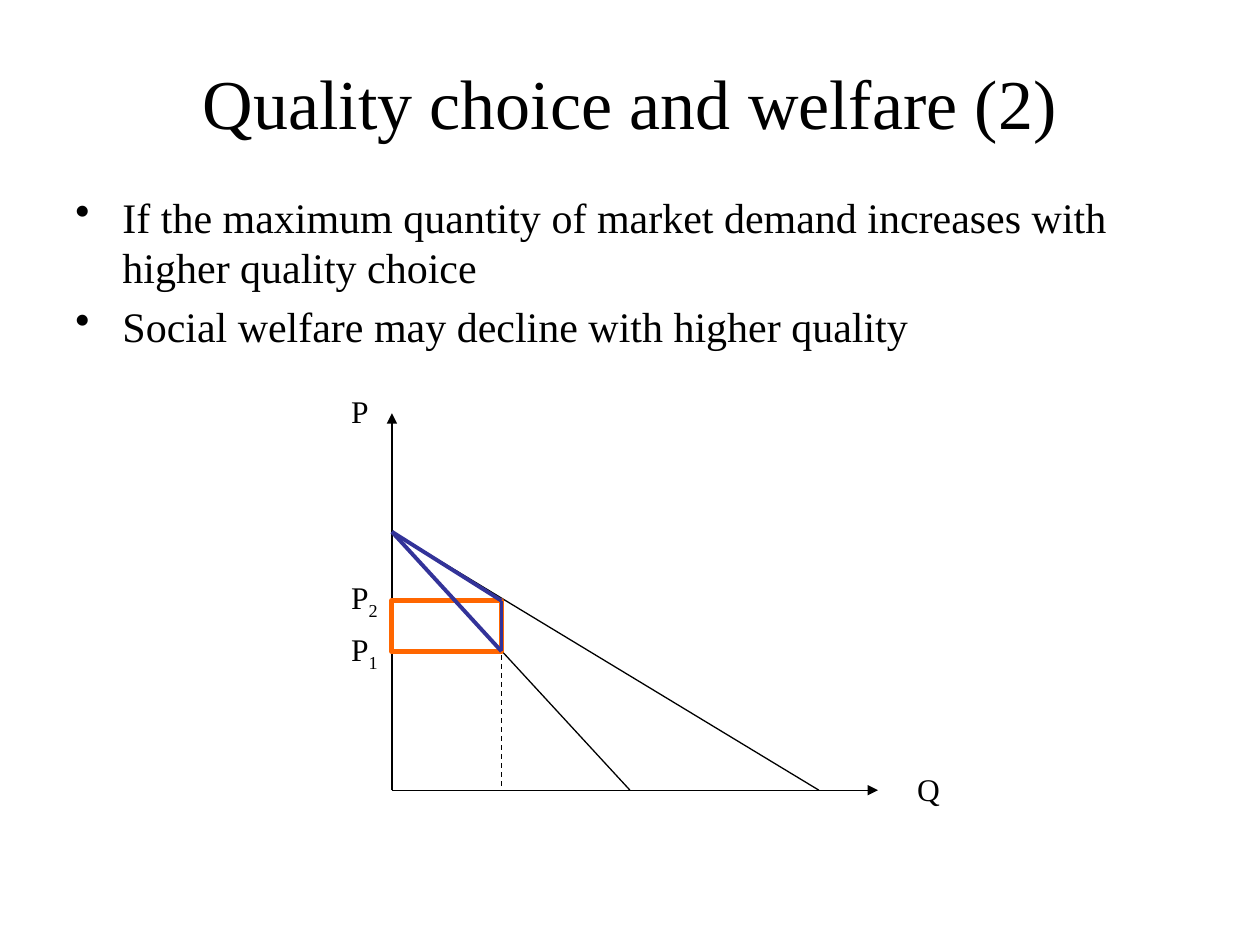
from lxml import etree
from pptx import Presentation
from pptx.dml.color import RGBColor
from pptx.enum.dml import MSO_LINE
from pptx.enum.shapes import MSO_CONNECTOR, MSO_SHAPE
from pptx.enum.text import MSO_ANCHOR, PP_ALIGN
from pptx.oxml.ns import qn
from pptx.util import Cm, Pt

STRAIGHT = MSO_CONNECTOR.STRAIGHT
RECT = MSO_SHAPE.RECTANGLE
DASH = MSO_LINE.DASH
MIDDLE = MSO_ANCHOR.MIDDLE
CENTER = PP_ALIGN.CENTER

FONT = "Times New Roman"
COLORS = {"ink": "000000", "rent": "FF6600", "gain": "333399"}


def color(name):
    return RGBColor.from_string(COLORS[name])


def add_run(para, text, size, base=None):
    """Add one run; base is a baseline shift in percent."""
    run = para.add_run()
    run.text = text
    run.font.name = FONT
    run.font.size = Pt(size)
    run.font.color.rgb = color("ink")
    if base:
        run.font._element.set("baseline", str(base * 1000))


def add_box(slide, box, wrap=True):
    frame = slide.shapes.add_textbox(*map(Cm, box)).text_frame
    frame.word_wrap = wrap
    return frame


def add_title(slide, box, text):
    frame = add_box(slide, box)
    frame.vertical_anchor = MIDDLE
    para = frame.paragraphs[0]
    para.alignment = CENTER
    add_run(para, text, 40)


def add_bullets(slide, box, items):
    frame = add_box(slide, box)
    for i, item in enumerate(items):
        para = frame.add_paragraph() if i else frame.paragraphs[0]
        para.space_before = Pt(5)
        props = para._p.get_or_add_pPr()
        props.set("marL", str(Cm(0.95)))
        props.set("indent", str(-Cm(0.95)))
        etree.SubElement(props, qn("a:buChar")).set("char", "•")
        add_run(para, item, 24)


def add_line(slide, start, end, name="ink", width=0.75, dash=None, arrow=False):
    line = slide.shapes.add_connector(STRAIGHT, *map(Cm, (*start, *end)))
    line.line.color.rgb = color(name)
    line.line.width = Pt(width)
    if dash:
        line.line.dash_style = dash
    if arrow:
        stroke = line.line._get_or_add_ln()
        etree.SubElement(stroke, qn("a:tailEnd")).set("type", "triangle")
    etree.SubElement(line._element.spPr, qn("a:effectLst"))


def add_label(slide, left, top, text, sub=""):
    frame = add_box(slide, (left, top, 1.07 if sub else 0.9, 1.02), wrap=False)
    para = frame.paragraphs[0]
    add_run(para, text, 18)
    if sub:
        add_run(para, sub, 18, -25)


def add_graph(slide, box):
    """Draw two demand lines that share a choke price."""
    left, top, wide, high = box
    base = top + high
    peak = (left, top + 2.39)
    sold = left + 2.21
    high_p, low_p = top + 3.78, top + 4.8
    upper, lower = (sold, high_p), (sold, low_p)

    for end in ((left, top), (left + wide, base)):
        add_line(slide, (left, base), end, arrow=True)
    for reach in (4.8, 8.61):
        add_line(slide, peak, (left + reach, base))
    for start, end in (
        ((left, low_p), lower),
        (upper, (sold, base)),
        (upper, (left, high_p)),
    ):
        add_line(slide, start, end, dash=DASH)

    rent = slide.shapes.add_shape(
        RECT, *map(Cm, (left, high_p, sold - left, low_p - high_p)))
    rent.shadow.inherit = False
    rent.fill.background()
    rent.line.color.rgb = color("rent")
    rent.line.width = Pt(3)

    for start, end in ((peak, upper), (peak, lower), (upper, lower)):
        add_line(slide, start, end, "gain", 2.25)

    side = left - 1.07
    add_label(slide, left + wide + 0.54, base - 0.53, "Q")
    add_label(slide, side, top - 0.56, "P")
    add_label(slide, side, low_p - 0.56, "P", "1")
    add_label(slide, side, high_p - 0.58, "P", "2")


def main():
    deck = Presentation()
    deck.slide_width, deck.slide_height = Cm(25.4), Cm(19.05)
    slide = deck.slides.add_slide(deck.slide_layouts[6])
    add_title(slide, (1.27, 0.76, 22.86, 2.57), "Quality choice and welfare (2)")
    add_bullets(slide, (1.27, 3.73, 22.86, 13.28), (
        "If the maximum quantity of market demand increases with "
        "higher quality choice",
        "Social welfare may decline with higher quality",
    ))
    add_graph(slide, (7.9, 8.33, 9.8, 7.6))
    deck.save("out.pptx")


if __name__ == "__main__":
    main()
